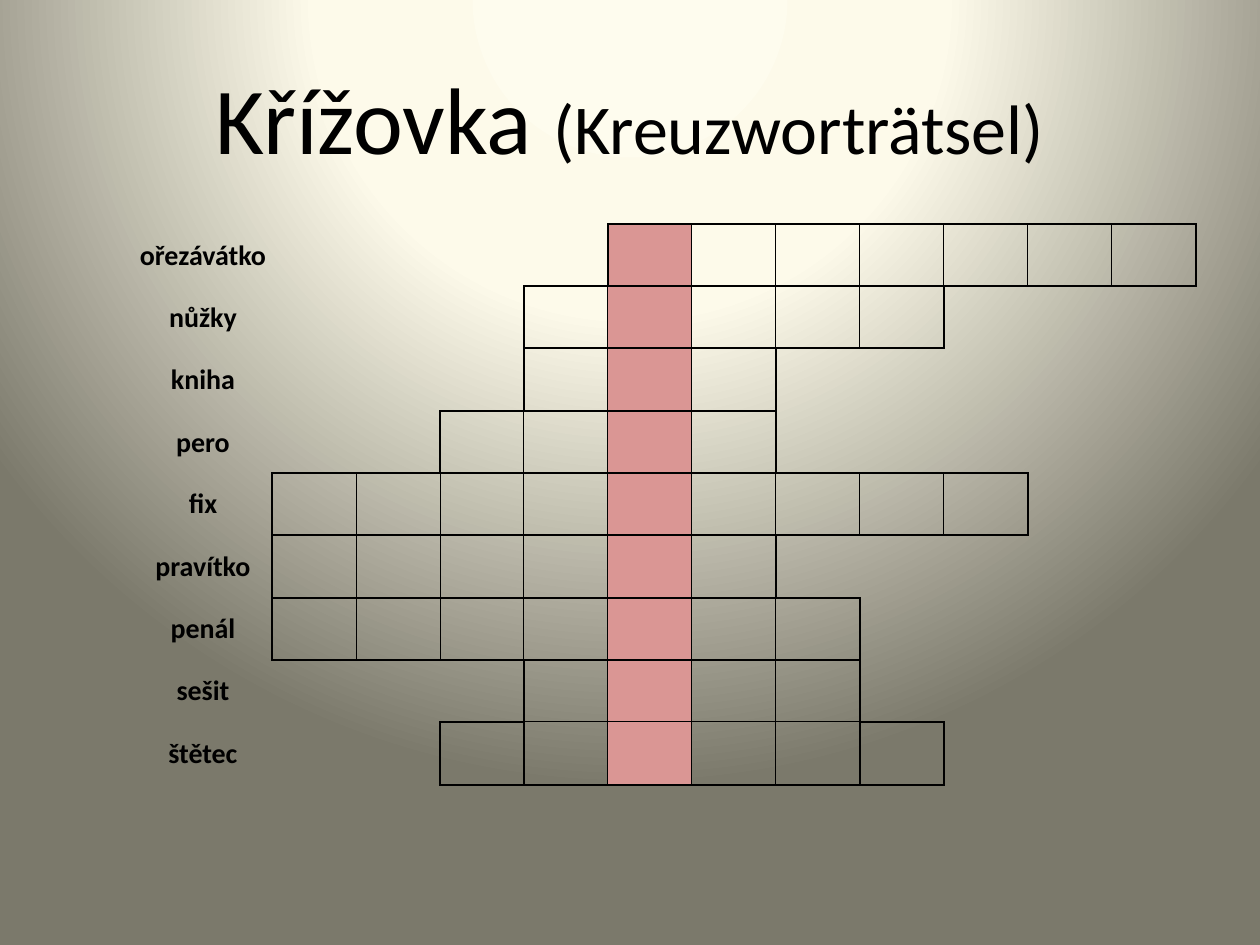
from dataclasses import dataclass
from typing import Optional

from lxml.etree import SubElement
from pptx import Presentation
from pptx.dml.color import RGBColor
from pptx.enum.text import MSO_ANCHOR, PP_ALIGN
from pptx.oxml import parse_xml
from pptx.oxml.ns import nsdecls, qn
from pptx.util import Emu, Pt

PX_PER_INCH = 126
BLACK = RGBColor(0x00, 0x00, 0x00)
SOLUTION_PINK = RGBColor(0xDA, 0x96, 0x94)
BACKDROP_STOPS = [
    (0, RGBColor(0xFE, 0xFC, 0xEE)),
    (40, RGBColor(0xFD, 0xFA, 0xEA)),
    (100, RGBColor(0x7B, 0x79, 0x6B)),
]
FONT = "Calibri"
THICK, THIN = 1.0, 0.5

GRID_LEFT, GRID_TOP, GRID_HEIGHT = 134, 224, 561
LABEL_WIDTH, BOX_WIDTH, BOX_COLUMNS = 138, 84, 11
SOLUTION_COLUMN = 5


@dataclass(frozen=True)
class Entry:
    """One crossword row: its label and the first and last letter column."""
    label: str
    first: int
    last: int


ENTRIES = [
    Entry("ořezávátko", 5, 11),
    Entry("nůžky", 4, 8),
    Entry("kniha", 4, 6),
    Entry("pero", 3, 6),
    Entry("fix", 1, 9),
    Entry("pravítko", 1, 6),
    Entry("penál", 1, 7),
    Entry("sešit", 4, 7),
    Entry("štětec", 3, 8),
]
LAST_ROW = len(ENTRIES) - 1
# The outline of the row above runs on through the last row
LAST_ROW_THICK_EDGES = (ENTRIES[-2].first, ENTRIES[-2].last + 1)


def px(length: int) -> Emu:
    return Emu(round(length * 914400 / PX_PER_INCH))


def write(paragraph, text: str, *, size: int, bold: bool = False,
          color: RGBColor = BLACK) -> None:
    paragraph.alignment = PP_ALIGN.CENTER
    run = paragraph.add_run()
    run.text = text
    run.font.name = FONT
    run.font.size = Pt(size)
    run.font.bold = bold
    run.font.color.rgb = color


def paint_background(slide) -> None:
    stops = "".join(
        f'<a:gs pos="{position * 1000}"><a:srgbClr val="{color}"/></a:gs>'
        for position, color in BACKDROP_STOPS)
    slide.element.cSld.insert(0, parse_xml(
        f'<p:bg {nsdecls("p", "a")}><p:bgPr><a:gradFill rotWithShape="1">'
        f'<a:gsLst>{stops}</a:gsLst><a:path path="circle">'
        '<a:fillToRect l="50000" t="-80000" r="50000" b="180000"/></a:path>'
        '</a:gradFill><a:effectLst/></p:bgPr></p:bg>'))


def is_box(row: int, column: int) -> bool:
    return (0 <= row <= LAST_ROW
            and ENTRIES[row].first <= column <= ENTRIES[row].last)


def left_edge(row: int, column: int) -> Optional[float]:
    """Line width between a cell and the one to its left."""
    sides = is_box(row, column - 1) + is_box(row, column)
    if sides == 2 and row == LAST_ROW and column in LAST_ROW_THICK_EDGES:
        return THICK
    return (None, THICK, THIN)[sides]


def top_edge(row: int, column: int) -> Optional[float]:
    """Line width between a cell and the one above it."""
    sides = is_box(row - 1, column) + is_box(row, column)
    if sides == 2 and row == LAST_ROW:
        return THIN
    return THICK if sides else None


def draw_border(cell, side: str, width: Optional[float]) -> None:
    line = SubElement(cell._tc.get_or_add_tcPr(), qn(f"a:ln{side}"))
    if width is None:
        SubElement(line, qn("a:noFill"))
        return
    line.set("w", str(Pt(width)))
    fill = SubElement(line, qn("a:solidFill"))
    SubElement(fill, qn("a:srgbClr")).set("val", str(BLACK))


def draw_cell(cell, row: int, column: int) -> None:
    draw_border(cell, "L", left_edge(row, column))
    draw_border(cell, "R", left_edge(row, column + 1))
    draw_border(cell, "T", top_edge(row, column))
    draw_border(cell, "B", top_edge(row + 1, column))
    if column == SOLUTION_COLUMN:
        cell.fill.solid()
        cell.fill.fore_color.rgb = SOLUTION_PINK
    else:
        cell.fill.background()
    if column == 0:
        cell.vertical_anchor = MSO_ANCHOR.MIDDLE
        cell.margin_left = cell.margin_right = cell.margin_top = px(1)
        cell.margin_bottom = 0
        write(cell.text_frame.paragraphs[0], ENTRIES[row].label,
              size=16, bold=True)


def draw_crossword(slide) -> None:
    rows = len(ENTRIES)
    table = slide.shapes.add_table(
        rows, BOX_COLUMNS + 1, px(GRID_LEFT), px(GRID_TOP),
        px(LABEL_WIDTH + BOX_COLUMNS * BOX_WIDTH), px(GRID_HEIGHT)).table
    table.first_row = table.horz_banding = False
    for column, table_column in enumerate(table.columns):
        table_column.width = px(BOX_WIDTH if column else LABEL_WIDTH)
    for row, table_row in enumerate(table.rows):
        table_row.height = px(GRID_HEIGHT * (row + 1) // rows
                              - GRID_HEIGHT * row // rows)
        for column, cell in enumerate(table_row.cells):
            draw_cell(cell, row, column)


def main() -> None:
    deck = Presentation()
    deck.slide_width, deck.slide_height = px(1260), px(945)
    slide = deck.slides.add_slide(deck.slide_layouts[5])
    paint_background(slide)

    # Title
    title = slide.shapes.title
    title.left, title.top = px(63), px(38)
    title.width, title.height = px(1134), px(157)
    title.text_frame.vertical_anchor = MSO_ANCHOR.MIDDLE
    heading = title.text_frame.paragraphs[0]
    write(heading, "Křížovka ", size=54)
    write(heading, "(Kreuzworträtsel)", size=40)

    # Crossword grid
    draw_crossword(slide)
    deck.save("out.pptx")


if __name__ == "__main__":
    main()
